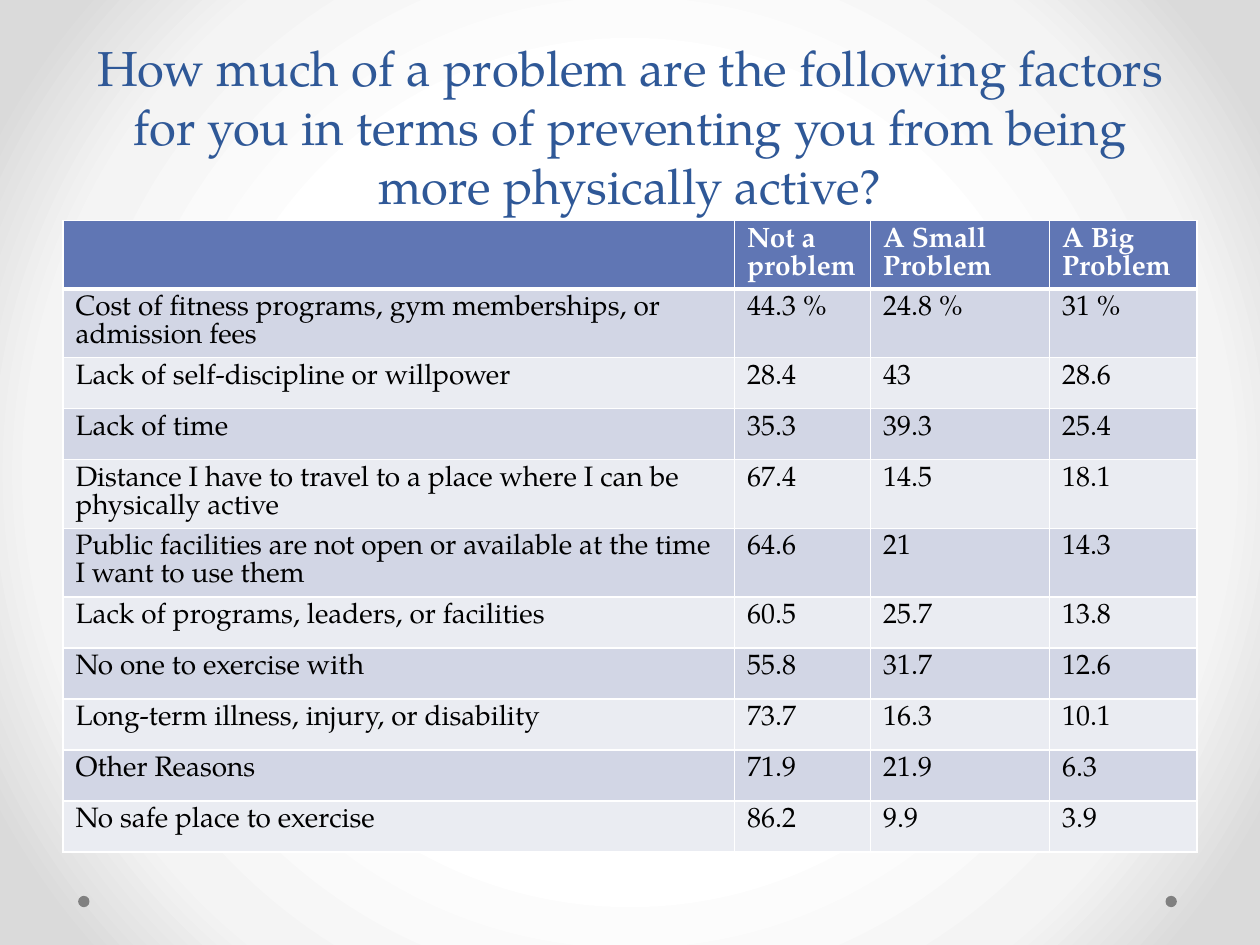
from typing import NamedTuple

from lxml import etree
from pptx import Presentation
from pptx.dml.color import RGBColor
from pptx.enum.shapes import MSO_SHAPE
from pptx.enum.text import MSO_ANCHOR, PP_ALIGN
from pptx.oxml import parse_xml
from pptx.oxml.ns import nsdecls, qn
from pptx.util import Inches, Pt

ELLIPSE = MSO_SHAPE.OVAL
BOTTOM = MSO_ANCHOR.BOTTOM
CENTER, LEFT = PP_ALIGN.CENTER, PP_ALIGN.LEFT

FONT = "TeX Gyre Pagella"
WHITE = RGBColor(0xFF, 0xFF, 0xFF)
BLACK = RGBColor(0, 0, 0)
GRAY = RGBColor(0x80, 0x80, 0x80)
TITLE_BLUE = RGBColor(0x2F, 0x58, 0x97)
HEADER_BLUE = RGBColor(0x60, 0x76, 0xB4)
BANDS = RGBColor(0xD2, 0xD6, 0xE5), RGBColor(0xEA, 0xEC, 0xF2)
BACKDROP = (50, WHITE), (76, RGBColor(0xF4, 0xF4, 0xF4)), (92, RGBColor(0xDA, 0xDA, 0xDA))

TITLE = ("How much of a problem are the following factors for you "
         "in terms of preventing you from being more physically active?")
COL_WIDTHS = 5.33, 1.08, 1.42, 1.17
ROW_HEIGHT = 0.405


class Row(NamedTuple):
    factor: str
    not_a_problem: str
    small: str
    big: str


ROWS = (
    Row("", "Not a problem", "A Small Problem", "A Big Problem"),
    Row("Cost of fitness programs, gym memberships, or admission fees",
        "44.3 %", "24.8 %", "31 %"),
    Row("Lack of self-discipline or willpower", "28.4", "43", "28.6"),
    Row("Lack of time", "35.3", "39.3", "25.4"),
    Row("Distance I have to travel to a place where I can be physically active",
        "67.4", "14.5", "18.1"),
    Row("Public facilities are not open or available at the time I want to use them",
        "64.6", "21", "14.3"),
    Row("Lack of programs, leaders, or facilities", "60.5", "25.7", "13.8"),
    Row("No one to exercise with", "55.8", "31.7", "12.6"),
    Row("Long-term illness, injury, or disability", "73.7", "16.3", "10.1"),
    Row("Other Reasons", "71.9", "21.9", "6.3"),
    Row("No safe place to exercise", "86.2", "9.9", "3.9"),
)


def write(tf, text: str, *, size: float, color: RGBColor, spacing: float,
          bold: bool = False, align=LEFT) -> None:
    p = tf.paragraphs[0]
    p.alignment = align
    p.line_spacing = Pt(spacing)
    p.font.size = Pt(size)
    if not text:
        return
    r = p.add_run()
    r.text = text
    r.font.name = FONT
    r.font.size = Pt(size)
    r.font.bold = bold
    r.font.color.rgb = color


def set_background(slide) -> None:
    """Fill the background with a gradient that spreads from the centre."""
    slide.background.fill.gradient()
    grad = slide.background.fill._xPr.find(qn("a:gradFill"))
    for child in list(grad):
        grad.remove(child)
    stops = "".join(f'<a:gs pos="{pos * 1000}"><a:srgbClr val="{color}"/></a:gs>'
                    for pos, color in BACKDROP)
    grad.append(parse_xml(f'<a:gsLst {nsdecls("a")}>{stops}</a:gsLst>'))
    grad.append(parse_xml(
        f'<a:path {nsdecls("a")} path="circle">'
        '<a:fillToRect l="50000" t="50000" r="50000" b="50000"/></a:path>'))


def add_dot(slide, left: float) -> None:
    sp = slide.shapes.add_shape(ELLIPSE, Inches(left), Inches(7.11), Inches(0.09), Inches(0.09))
    sp.shadow.inherit = False
    sp.fill.solid()
    sp.fill.fore_color.rgb = GRAY
    sp.line.fill.background()


def add_title(slide) -> None:
    sp = slide.shapes.add_textbox(Inches(0.5), Inches(0), Inches(9), Inches(1.75))
    tf = sp.text_frame
    tf.word_wrap = True
    tf.vertical_anchor = BOTTOM
    write(tf, TITLE, size=28, color=TITLE_BLUE, spacing=33.6, align=CENTER)


def set_borders(cell, bottom: float) -> None:
    """Draw white borders, 1 point wide except for the bottom one."""
    tc_pr = cell._tc.get_or_add_tcPr()
    for i, (side, width) in enumerate((("L", 1), ("R", 1), ("T", 1), ("B", bottom))):
        ln = etree.Element(qn(f"a:ln{side}"), w=str(Pt(width)))
        fill = etree.SubElement(ln, qn("a:solidFill"))
        etree.SubElement(fill, qn("a:srgbClr"), val=str(WHITE))
        tc_pr.insert(i, ln)


def add_factor_table(slide) -> None:
    frame = slide.shapes.add_table(len(ROWS), len(COL_WIDTHS), Inches(0.5), Inches(1.75),
                                   Inches(9), Inches(ROW_HEIGHT * len(ROWS)))
    table = frame.table
    for column, width in zip(table.columns, COL_WIDTHS):
        column.width = Inches(width)
    for i, row in enumerate(ROWS):
        header = i == 0
        table.rows[i].height = Inches(ROW_HEIGHT)
        for j, text in enumerate(row):
            cell = table.cell(i, j)
            cell.fill.solid()
            cell.fill.fore_color.rgb = HEADER_BLUE if header else BANDS[(i - 1) % 2]
            set_borders(cell, bottom=3 if header else 1)
            write(cell.text_frame, text, size=16, spacing=16, bold=header,
                  color=WHITE if header else BLACK)


def main() -> None:
    prs = Presentation()
    prs.slide_width, prs.slide_height = Inches(10), Inches(7.5)
    slide = prs.slides.add_slide(prs.slide_layouts[6])
    set_background(slide)
    for left in (9.25, 0.62):
        add_dot(slide, left)
    add_title(slide)
    add_factor_table(slide)
    prs.save("out.pptx")


if __name__ == "__main__":
    main()
